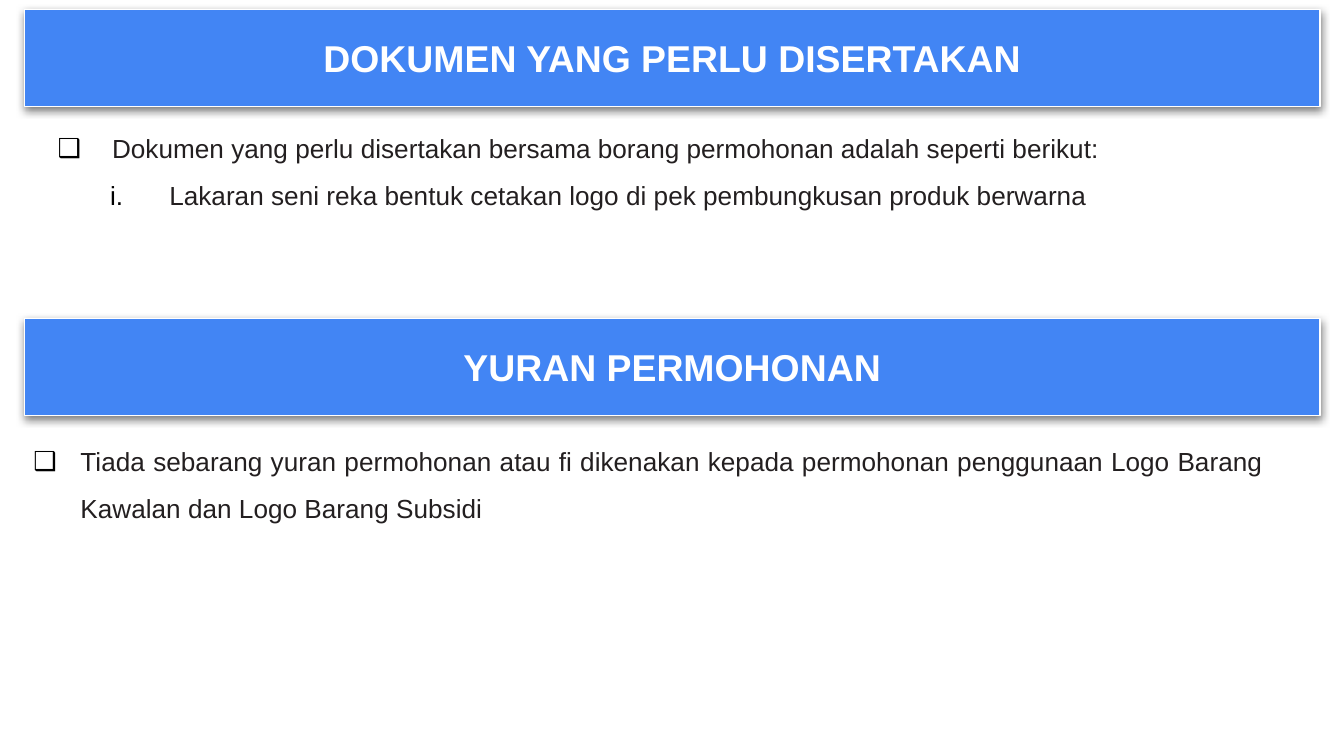
from lxml import etree
from pptx import Presentation
from pptx.dml.color import RGBColor
from pptx.enum.text import MSO_ANCHOR, MSO_AUTO_SIZE, PP_ALIGN
from pptx.oxml.ns import qn
from pptx.util import Cm, Pt

CENTER, JUSTIFY = PP_ALIGN.CENTER, PP_ALIGN.JUSTIFY
TOP, MIDDLE = MSO_ANCHOR.TOP, MSO_ANCHOR.MIDDLE
NO_FIT = MSO_AUTO_SIZE.NONE

COLORS = {"banner": "4285F4", "white": "FFFFFF", "text": "231F20", "black": "000000"}
BANNER_FONT = {"name": "Arial", "size": Pt(20), "bold": True}
LIST_FONT = {"name": "Arial", "size": Pt(14), "bold": False}
BOX = ("buChar", {"char": "❑"}, Cm(1.27), Cm(-0.89), 0)
ROMAN = ("buAutoNum", {"type": "romanLcPeriod"}, Cm(2.49), Cm(-1.12), 1)


def rgb(name):
    return RGBColor.from_string(COLORS[name])


def set_attrs(target, values):
    for name, value in values.items():
        setattr(target, name, value)


def add_xml(parent, tag, **attrs):
    return etree.SubElement(parent, qn(f"a:{tag}"), attrs)


def place(sp, box, anchor):
    set_attrs(sp, dict(zip(("left", "top", "width", "height"), box)))
    tf = sp.text_frame
    margins = dict.fromkeys(
        ("margin_left", "margin_top", "margin_right", "margin_bottom"), Cm(0.25))
    set_attrs(tf, {"word_wrap": True, "auto_size": NO_FIT,
                   "vertical_anchor": anchor, **margins})
    return tf


def write(p, text, font, color, align, spacing):
    set_attrs(p, {"alignment": align, "line_spacing": spacing,
                  "space_before": Pt(0), "space_after": Pt(0)})
    r = p.add_run()
    r.text = text
    set_attrs(r.font, font)
    r.font.color.rgb = rgb(color)


def add_shadow(sp):
    effects = add_xml(sp._element.spPr, "effectLst")
    shadow = add_xml(effects, "outerShdw", blurRad=str(Pt(4.5)), dist=str(Pt(1.5)),
                     dir="5400000", algn="bl", rotWithShape="0")
    color = add_xml(shadow, "srgbClr", val=COLORS["black"])
    add_xml(color, "alpha", val="50000")


def build_banner(sp, box, text):
    tf = place(sp, box, MIDDLE)
    sp.fill.solid()
    sp.fill.fore_color.rgb = rgb("banner")
    sp.line.color.rgb = rgb("white")
    sp.line.width = Pt(0.75)
    add_shadow(sp)
    write(tf.paragraphs[0], text, BANNER_FONT, "white", CENTER, 1.0)


def build_list(sp, box, items):
    tf = place(sp, box, TOP)
    for i, (text, marker) in enumerate(items):
        tag, attrs, indent, hanging, level = marker
        p = tf.add_paragraph() if i else tf.paragraphs[0]
        p.level = level
        write(p, text, LIST_FONT, "text", JUSTIFY, 1.5)
        pPr = p._p.get_or_add_pPr()
        pPr.set("marL", str(indent))
        pPr.set("indent", str(hanging))
        add_xml(add_xml(pPr, "buClr"), "srgbClr", val=COLORS["black"])
        add_xml(pPr, "buFont", typeface="Arial")
        add_xml(pPr, tag, **attrs)


def main():
    prs = Presentation()
    prs.slide_width, prs.slide_height = Cm(25.4), Cm(14.29)
    s = prs.slides.add_slide(prs.slide_layouts.get_by_name("Comparison"))
    holders = {sp.placeholder_format.idx: sp for sp in s.placeholders}

    build_banner(holders[0], (Cm(0.46), Cm(0.18), Cm(24.49), Cm(1.83)),
                 "DOKUMEN YANG PERLU DISERTAKAN")
    build_list(holders[2], (Cm(0.46), Cm(1.96), Cm(24.13), Cm(2.69)), [
        (" Dokumen yang perlu disertakan bersama borang permohonan "
         "adalah seperti berikut:", BOX),
        ("Lakaran seni reka bentuk cetakan logo di pek pembungkusan "
         "produk berwarna", ROMAN),
    ])
    build_banner(holders[1], (Cm(0.46), Cm(6.02), Cm(24.49), Cm(1.83)),
                 "YURAN PERMOHONAN")
    build_list(holders[4], (Cm(0), Cm(7.87), Cm(24.13), Cm(2.69)), [
        ("Tiada sebarang yuran permohonan atau fi dikenakan kepada permohonan "
         "penggunaan Logo Barang Kawalan dan Logo Barang Subsidi", BOX),
    ])

    unused = holders[3]._element
    unused.getparent().remove(unused)
    prs.save("out.pptx")


if __name__ == "__main__":
    main()
